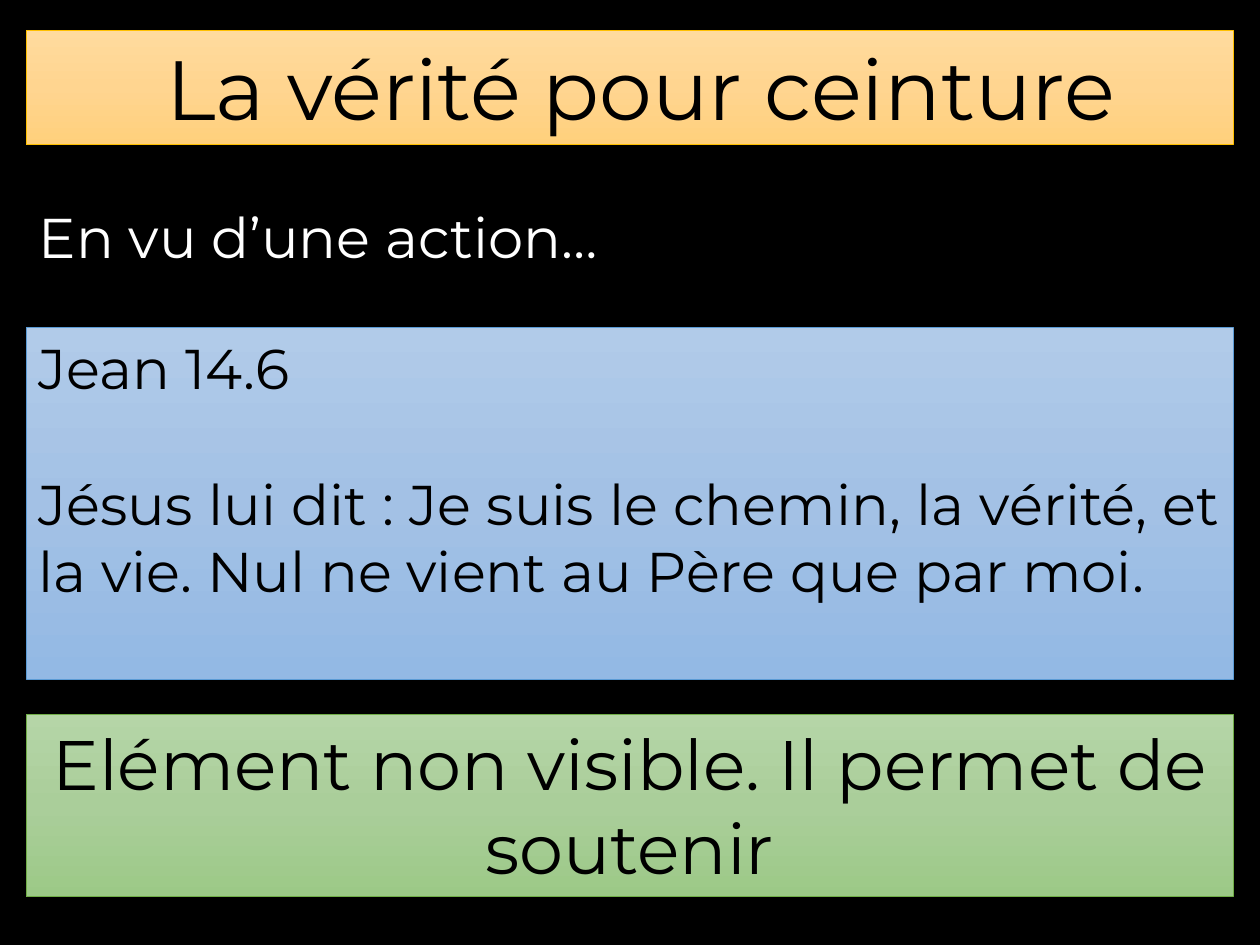
"""Build the slide « La vérité pour ceinture »."""
from copy import deepcopy
from dataclasses import dataclass

from pptx import Presentation
from pptx.dml.color import RGBColor
from pptx.enum.shapes import MSO_SHAPE
from pptx.enum.text import MSO_ANCHOR, PP_ALIGN
from pptx.oxml.ns import qn
from pptx.util import Cm, Pt

RECT = MSO_SHAPE.RECTANGLE
TOP = MSO_ANCHOR.TOP
CENTER = PP_ALIGN.CENTER
JUSTIFY = PP_ALIGN.JUSTIFY


@dataclass(frozen=True)
class Theme:
    font: str = "Montserrat"
    title_size: int = 48
    summary_size: int = 40
    body_size: int = 32
    verse_gap: int = 39
    line_width: float = 0.5
    background: str = "000000"
    dark: str = "000000"
    light: str = "FFFFFF"
    gold: tuple = ("FFDB9E", "FFD590", "FFD07C")
    gold_line: str = "FFC000"
    blue: tuple = ("B1CBE9", "A3C1E5", "93B9E4")
    blue_line: str = "5B9BD5"
    green: tuple = ("B5D5A7", "AACE9A", "9CC987")
    green_line: str = "70AD47"


THEME = Theme()
LEFT, WIDTH = Cm(0.53), Cm(24.33)


def rgb(value):
    return RGBColor.from_string(value)


def set_text(sp, lines, size, color, align, gap=0):
    tf = sp.text_frame
    tf.word_wrap = True
    tf.vertical_anchor = TOP
    tf.text = "\n".join(lines)
    for i, p in enumerate(tf.paragraphs):
        p.alignment = align
        p.space_before = Pt(gap if i else 0)
        for r in p.runs:
            r.font.name = THEME.font
            r.font.size = Pt(size)
            r.font.color.rgb = rgb(color)


def set_gradient(sp, colors):
    fill = sp.fill
    fill.gradient()
    fill.gradient_angle = 270
    stops = sp._element.spPr.find(f".//{qn('a:gsLst')}")
    stops.append(deepcopy(stops[-1]))
    for i, (stop, color) in enumerate(zip(fill.gradient_stops, colors)):
        stop.position = i / (len(colors) - 1)
        stop.color.rgb = rgb(color)


def add_panel(s, top, height, colors, line):
    sp = s.shapes.add_shape(RECT, LEFT, top, WIDTH, height)
    sp.shadow.inherit = False
    set_gradient(sp, colors)
    sp.line.color.rgb = rgb(line)
    sp.line.width = Pt(THEME.line_width)
    return sp


def add_label(s, top, height):
    return s.shapes.add_textbox(LEFT, top, WIDTH, height)


def main():
    prs = Presentation()
    prs.slide_width, prs.slide_height = Cm(25.4), Cm(19.05)
    s = prs.slides.add_slide(prs.slide_layouts[6])
    s.background.fill.solid()
    s.background.fill.fore_color.rgb = rgb(THEME.background)

    title = add_panel(s, Cm(0.61), Cm(2.31), THEME.gold, THEME.gold_line)
    set_text(title, [" La vérité pour ceinture"], THEME.title_size, THEME.dark, CENTER)

    intro = add_label(s, Cm(3.96), Cm(1.63))
    set_text(intro, ["En vu d’une action…"], THEME.body_size, THEME.light, JUSTIFY)

    verse = add_panel(s, Cm(6.6), Cm(7.09), THEME.blue, THEME.blue_line)
    verse_lines = [
        "Jean 14.6",
        "Jésus lui dit : Je suis le chemin, la vérité, et la vie. "
        "Nul ne vient au Père que par moi.",
    ]
    set_text(verse, verse_lines, THEME.body_size, THEME.dark, JUSTIFY, THEME.verse_gap)

    summary = add_panel(s, Cm(14.4), Cm(3.68), THEME.green, THEME.green_line)
    set_text(summary, ["Elément non visible. Il permet de soutenir"],
             THEME.summary_size, THEME.dark, CENTER)

    prs.save("out.pptx")


if __name__ == "__main__":
    main()
